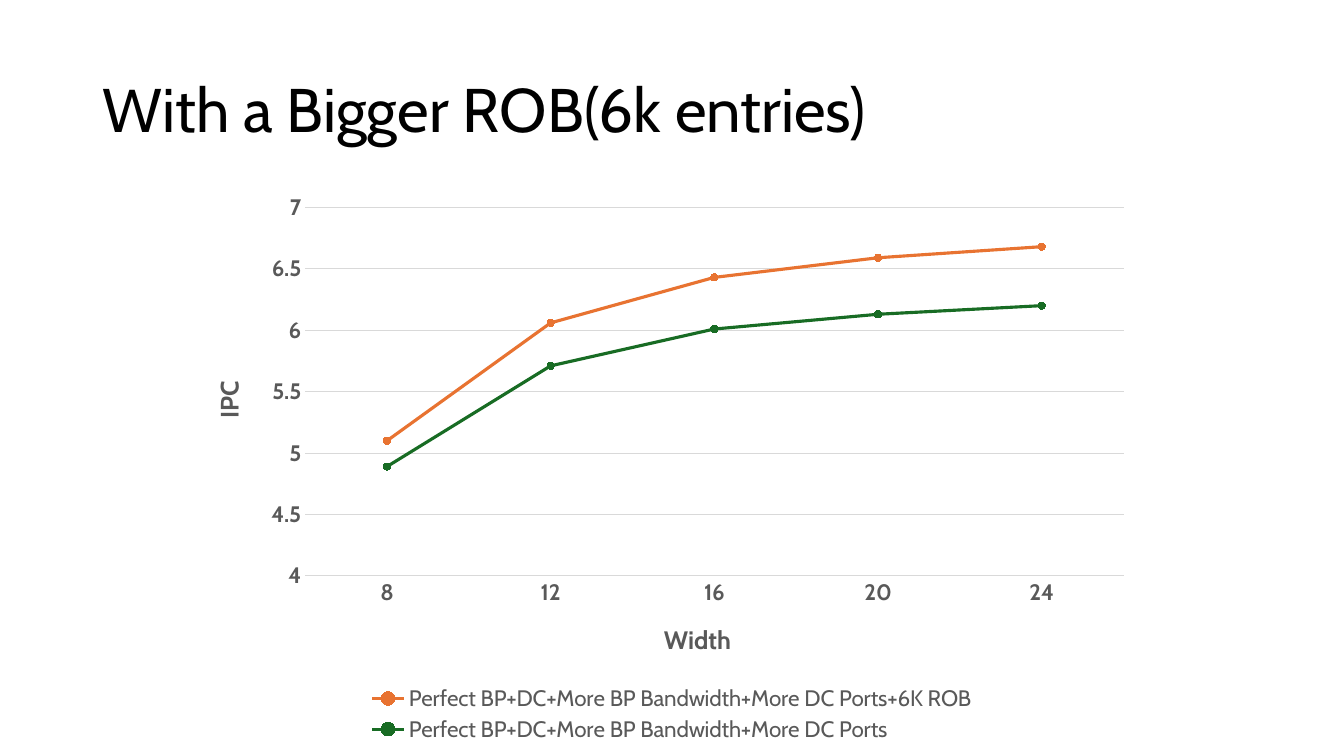
import lxml.etree
import pptx
import pptx.chart.data
import pptx.dml.color
import pptx.enum.chart
import pptx.enum.text
import pptx.oxml.ns
import pptx.util

BLACK = pptx.dml.color.RGBColor(0x00, 0x00, 0x00)
GRAY = pptx.dml.color.RGBColor(0x59, 0x59, 0x59)
GRID_GRAY = pptx.dml.color.RGBColor(0xD9, 0xD9, 0xD9)
ORANGE = pptx.dml.color.RGBColor(0xE8, 0x73, 0x31)
GREEN = pptx.dml.color.RGBColor(0x18, 0x6C, 0x24)

SLIDE_WIDTH, SLIDE_HEIGHT = pptx.util.Inches(13.33), pptx.util.Inches(7.5)
TITLE_BOX = (0.069, 0.053, 0.863, 0.193)
CHART_BOX = (0.15, 0.247, 0.7, 0.741)
PLOT_SHARES = {"x": 0.11, "y": 0.037, "w": 0.87, "h": 0.658}
FONT = "Cabin"
WIDTHS = ("8", "12", "16", "20", "24")
SERIES = (
    ("Perfect BP+DC+More BP Bandwidth+More DC Ports+6K ROB", (5.1, 6.06, 6.43, 6.59, 6.68), ORANGE),
    ("Perfect BP+DC+More BP Bandwidth+More DC Ports", (4.89, 5.71, 6.01, 6.13, 6.2), GREEN),
)


def apply_format(target, values):
    """Set each attribute of the target from a dict."""
    for name, value in values.items():
        setattr(target, name, value)


def format_font(font, size, color, bold=False):
    """Give a font the slide's typeface and the given look."""
    apply_format(font, {"name": FONT, "size": pptx.util.Pt(size), "bold": bold})
    font.color.rgb = color


def format_line(line, color, width):
    """Draw a line in one colour."""
    line.color.rgb = color
    line.width = pptx.util.Pt(width)


def scale_box(shares):
    """Turn shares of the slide into lengths."""
    sides = (SLIDE_WIDTH, SLIDE_HEIGHT) * 2
    return [round(share * side) for share, side in zip(shares, sides)]


def place_title(slide, box, text):
    """Place the title placeholder in its box."""
    title = slide.shapes.title
    apply_format(title, dict(zip(("left", "top", "width", "height"), box)))
    frame = title.text_frame
    apply_format(frame, {
        "text": text,
        "word_wrap": True,
        "auto_size": pptx.enum.text.MSO_AUTO_SIZE.NONE,
        "vertical_anchor": pptx.enum.text.MSO_ANCHOR.MIDDLE,
    })
    paragraph = frame.paragraphs[0]
    apply_format(paragraph, {"alignment": pptx.enum.text.PP_ALIGN.LEFT, "line_spacing": 0.9})
    format_font(paragraph.runs[0].font, 44, BLACK)


def format_axis(axis, title, rotation):
    """Style an axis with its title and tick labels."""
    tick_none = pptx.enum.chart.XL_TICK_MARK.NONE
    apply_format(axis, {"major_tick_mark": tick_none, "minor_tick_mark": tick_none})
    format_font(axis.tick_labels.font, 16, GRAY, True)
    frame = axis.axis_title.text_frame
    frame.text = title
    format_font(frame.paragraphs[0].runs[0].font, 18, GRAY, True)
    frame._txBody.bodyPr.set("rot", str(rotation))


def set_plot_layout(chart):
    """Fix the inner plot area at its shares of the chart."""
    qn = pptx.oxml.ns.qn
    plot_area = chart.element.find(".//" + qn("c:plotArea"))
    for layout in plot_area.findall(qn("c:layout")):
        plot_area.remove(layout)
    layout = lxml.etree.Element(qn("c:layout"))
    plot_area.insert(0, layout)
    manual = lxml.etree.SubElement(layout, qn("c:manualLayout"))
    settings = {"layoutTarget": "inner", "xMode": "edge", "yMode": "edge", **PLOT_SHARES}
    for name, value in settings.items():
        lxml.etree.SubElement(manual, qn("c:" + name)).set("val", str(value))


def place_chart(slide, box):
    """Place the line chart of IPC against width."""
    data = pptx.chart.data.CategoryChartData()
    data.categories = WIDTHS
    for name, values, _ in SERIES:
        data.add_series(name, values)
    kind = pptx.enum.chart.XL_CHART_TYPE.LINE_MARKERS
    chart = slide.shapes.add_chart(kind, *box, data).chart
    apply_format(chart, {"has_title": False, "has_legend": True})
    format_font(chart.font, 10, BLACK)
    apply_format(chart.legend, {
        "position": pptx.enum.chart.XL_LEGEND_POSITION.BOTTOM,
        "include_in_layout": False,
    })
    format_font(chart.legend.font, 16, GRAY)
    format_axis(chart.category_axis, "Width", 0)
    format_line(chart.category_axis.format.line, GRID_GRAY, 0.75)
    value_axis = chart.value_axis
    format_axis(value_axis, "IPC", -5400000)
    value_axis.format.line.fill.background()
    apply_format(value_axis, {"minimum_scale": 4, "maximum_scale": 7, "major_unit": 0.5})
    format_line(value_axis.major_gridlines.format.line, GRID_GRAY, 0.75)
    plot = chart.plots[0]
    plot.vary_by_categories = False
    for series, (_, _, color) in zip(plot.series, SERIES):
        series.smooth = False
        format_line(series.format.line, color, 2.25)
        marker = series.marker
        apply_format(marker, {"style": pptx.enum.chart.XL_MARKER_STYLE.CIRCLE, "size": 5})
        marker.format.fill.solid()
        marker.format.fill.fore_color.rgb = color
        format_line(marker.format.line, color, 0.75)
    set_plot_layout(chart)


def main():
    """Build the slide and save it."""
    presentation = pptx.Presentation()
    apply_format(presentation, {"slide_width": SLIDE_WIDTH, "slide_height": SLIDE_HEIGHT})
    slide = presentation.slides.add_slide(presentation.slide_layouts[5])
    place_title(slide, scale_box(TITLE_BOX), "With a Bigger ROB(6k entries)")
    place_chart(slide, scale_box(CHART_BOX))
    presentation.save("out.pptx")


if __name__ == "__main__":
    main()
